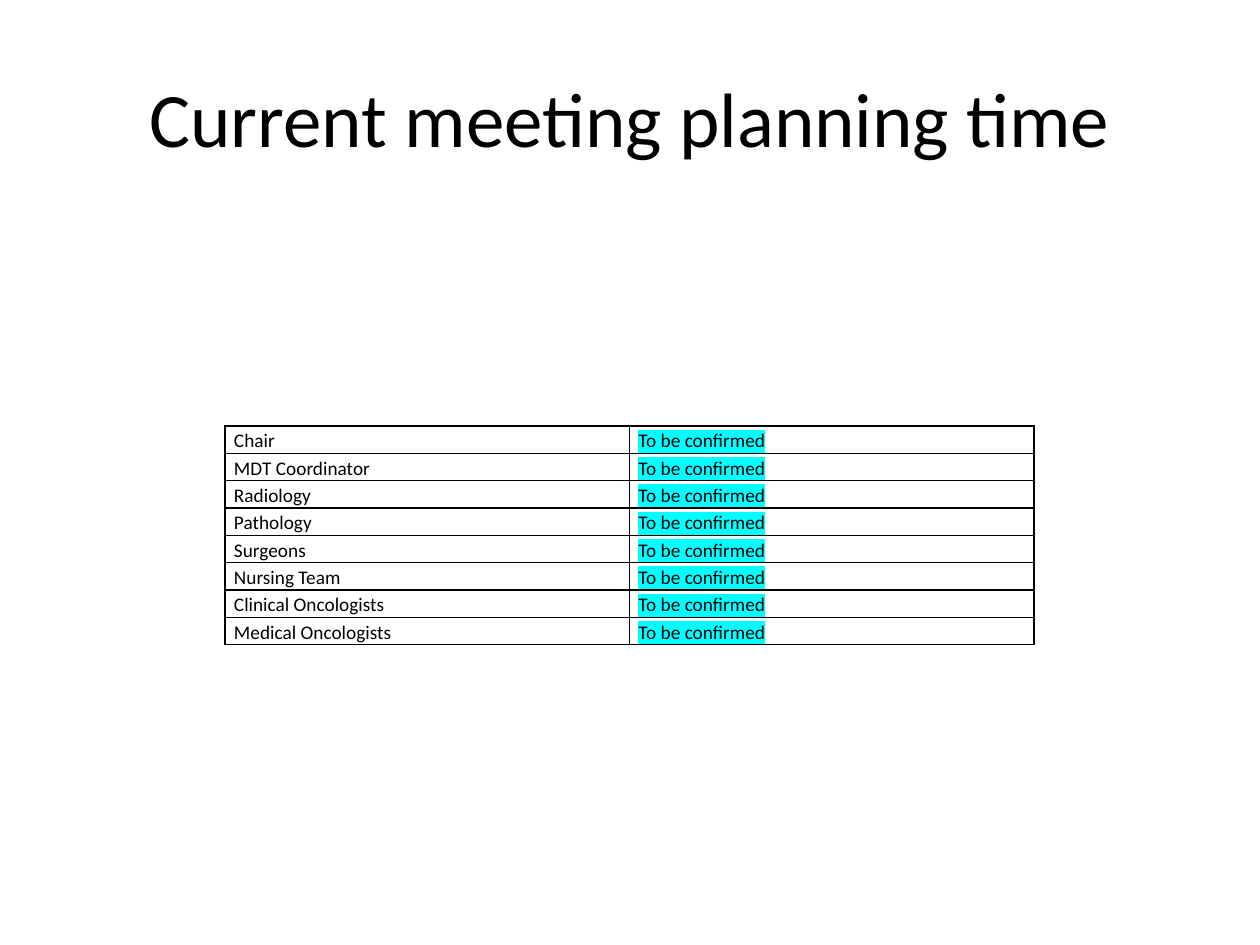
from dataclasses import dataclass

from lxml.etree import SubElement
from pptx import Presentation
from pptx.dml.color import RGBColor
from pptx.enum.text import MSO_ANCHOR as Anchor, PP_ALIGN as Align
from pptx.oxml.ns import qn
from pptx.util import Emu, Pt

PX = 914400 // 126
FONT = "Calibri"
BLACK, CYAN = "000000", "00FFFF"


@dataclass
class Duty:
    team: str
    time: str = "To be confirmed"


DUTIES = [Duty(team) for team in (
    "Chair", "MDT Coordinator", "Radiology", "Pathology", "Surgeons",
    "Nursing Team", "Clinical Oncologists", "Medical Oncologists")]


def px(n: int) -> Emu:
    return Emu(n * PX)


def rgb(color: str) -> RGBColor:
    return RGBColor.from_string(color)


def apply(obj, values: dict) -> None:
    for name, value in values.items():
        setattr(obj, name, value)


def write(p, text: str, size: int):
    r = p.add_run()
    r.text = text
    apply(r.font, {"name": FONT, "size": Pt(size)})
    r.font.color.rgb = rgb(BLACK)
    return r


def highlight(r, color: str) -> None:
    # The highlight belongs right after the text fill
    r_pr = r.font._element
    mark = SubElement(r_pr, qn("a:highlight"))
    SubElement(mark, qn("a:srgbClr"), val=color)
    r_pr.find(qn("a:solidFill")).addnext(mark)


def add_borders(cell, color: str, width: int) -> None:
    tc_pr = cell._tc.get_or_add_tcPr()
    for i, side in enumerate(("lnL", "lnR", "lnT", "lnB")):
        ln = SubElement(tc_pr, qn(f"a:{side}"), w=str(Pt(width)))
        fill = SubElement(ln, qn("a:solidFill"))
        SubElement(fill, qn("a:srgbClr"), val=color)
        tc_pr.insert(i, ln)


def fill_cell(cell, text: str, mark: str | None = None) -> None:
    apply(cell, {"margin_left": px(9), "margin_right": px(9),
                 "margin_top": 0, "margin_bottom": 0})
    cell.fill.background()
    add_borders(cell, BLACK, 1)
    p = cell.text_frame.paragraphs[0]
    p.line_spacing = 1.15
    r = write(p, text, 11)
    if mark:
        highlight(r, mark)


def add_title(slide, text: str) -> None:
    title = slide.shapes.title
    apply(title, {"left": px(63), "top": px(38),
                  "width": px(1134), "height": px(157)})
    tf = title.text_frame
    apply(tf, {"word_wrap": True, "vertical_anchor": Anchor.MIDDLE})
    p = tf.paragraphs[0]
    p.alignment = Align.CENTER
    write(p, text, 44)


def add_duties(slide, duties: list[Duty]) -> None:
    table = slide.shapes.add_table(
        len(duties), 2, px(225), px(426), px(809), px(27 * len(duties))).table
    apply(table, {"first_row": False, "horz_banding": False})
    for row, duty in zip(table.rows, duties):
        team, time = row.cells
        fill_cell(team, duty.team)
        fill_cell(time, duty.time, CYAN)


def main() -> None:
    prs = Presentation()
    apply(prs, {"slide_width": px(1260), "slide_height": px(945)})
    slide = prs.slides.add_slide(prs.slide_layouts[5])  # title only
    add_title(slide, "Current meeting planning time")
    add_duties(slide, DUTIES)
    prs.save("out.pptx")


if __name__ == "__main__":
    main()
